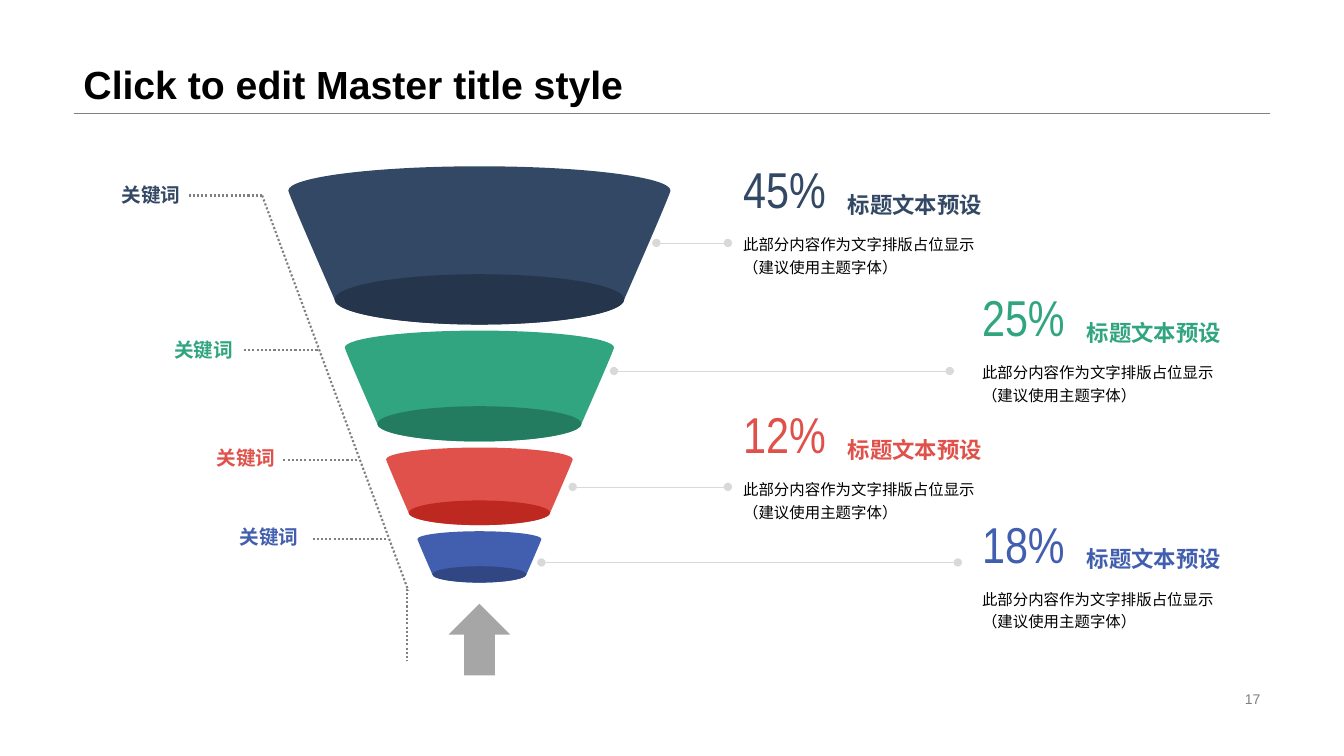
import copy
from collections import namedtuple

from lxml import etree
from pptx import Presentation
from pptx import util as u
from pptx.dml.color import RGBColor
from pptx.enum import dml, shapes, text
from pptx.oxml.ns import qn

COLORS = {
    "black": "000000", "gray": "808080", "arrow": "A6A6A6", "leader": "D9D9D9",
    "navy": "324865", "navy_dark": "25364C",
    "green": "30A580", "green_dark": "247C60",
    "red": "DF514A", "red_dark": "BD2921",
    "blue": "425FAF", "blue_dark": "314783",
}
FUNNEL_CENTER = 4.755
ROUND = 0.55  # handle length of a Bezier quarter ellipse
BODY = "此部分内容作为文字排版占位显示\n（建议使用主题字体）"

# Horizontal place of a description, with widths of its body and heading
Column = namedtuple("Column", "left body_width heading_width")
INNER = Column(7.37, 2.99, 1.87)
OUTER = Column(9.74, 2.67, 1.67)

# keyword: left, top; dots and leader: start x, end x, y
Tier = namedtuple("Tier", "color top width height percent column text_top keyword dots leader")
TIERS = [
    Tier("navy", 1.65, 3.79, 1.57, "45%", INNER, 1.57,
         (0.89, 1.65), (1.87, 2.6, 1.94), (6.51, 7.22, 2.41)),
    Tier("green", 3.28, 2.67, 1.1, "25%", OUTER, 2.84,
         (1.41, 3.18), (2.42, 3.15, 3.47), (6.09, 9.42, 3.68)),
    Tier("red", 4.44, 1.85, 0.77, "12%", INNER, 4,
         (1.83, 4.26), (2.81, 3.55, 4.56), (5.68, 7.22, 4.83)),
    Tier("blue", 5.27, 1.23, 0.51, "18%", OUTER, 5.09,
         (2.06, 5.04), (3.1, 3.84, 5.35), (5.37, 9.5, 5.58)),
]


def rgb(name):
    return RGBColor.from_string(COLORS[name])


def write_text(frame, content, size=11, color="black", font="Arial", bold=False,
               align=text.PP_ALIGN.LEFT, anchor=text.MSO_ANCHOR.TOP,
               spacing=1.0, margins=(0, 0)):
    frame.word_wrap = True
    frame.vertical_anchor = anchor
    frame.margin_left = frame.margin_right = u.Inches(margins[0])
    frame.margin_top = frame.margin_bottom = u.Inches(margins[1])
    paragraph = frame.paragraphs[0]
    paragraph.text = content.replace("\n", "\v")
    paragraph.alignment = align
    paragraph.line_spacing = spacing
    for run in paragraph.runs:
        run.font.name = font
        run.font.size = u.Pt(size)
        run.font.bold = bold
        run.font.color.rgb = rgb(color)
    # A line break carries the same size as the text around it
    for line_break in paragraph._p.findall(qn("a:br")):
        line_break.insert(0, copy.deepcopy(paragraph.runs[0]._r.rPr))


class FunnelSlide:
    """Holds the slide and draws each kind of element in its style."""

    def __init__(self, slide):
        self.slide = slide

    def text(self, left, top, width, height, content, **style):
        box = self.slide.shapes.add_textbox(*map(u.Inches, (left, top, width, height)))
        write_text(box.text_frame, content, **style)

    def paint(self, shape, color):
        shape.shadow.inherit = False
        shape.fill.solid()
        shape.fill.fore_color.rgb = rgb(color)
        shape.line.fill.background()

    def shape(self, kind, left, top, width, height, color):
        shape = self.slide.shapes.add_shape(kind, *map(u.Inches, (left, top, width, height)))
        self.paint(shape, color)

    def line(self, x1, y1, x2, y2, color="gray", width=0.25, dotted=False, dots_at_ends=False):
        line = self.slide.shapes.add_connector(
            shapes.MSO_CONNECTOR.STRAIGHT, *map(u.Inches, (x1, y1, x2, y2)))
        line.line.color.rgb = rgb(color)
        line.line.width = u.Pt(width)
        if dotted:
            line.line.dash_style = dml.MSO_LINE.ROUND_DOT
        if dots_at_ends:
            for end in ("a:headEnd", "a:tailEnd"):
                etree.SubElement(line.line._get_or_add_ln(), qn(end), type="oval")
        etree.SubElement(line._element.spPr, qn("a:effectLst"))

    def curve(self, points, color):
        """Draw a closed outline: a start point, then three points per Bezier curve."""
        points = [(u.Inches(x), u.Inches(y)) for x, y in points]
        builder = self.slide.shapes.build_freeform(*points[0])
        builder.add_line_segments(points[1:], close=True)
        shape = builder.convert_to_shape()
        segments = list(shape._element.iter(qn("a:lnTo")))
        for first, second, third in zip(*[iter(segments)] * 3):
            first.tag = qn("a:cubicBezTo")
            for segment in (second, third):
                first.append(segment[0])
                segment.getparent().remove(segment)
        self.paint(shape, color)

    def tier(self, tier):
        """A cup: arc over the rim, slanted sides, arc under the base."""
        rim_width, rim_height = tier.width / 2, tier.height * 0.153
        base_width, base_height = tier.width * 0.379, tier.height * 0.159
        rim_y = tier.top + rim_height
        base_y = tier.top + tier.height - base_height
        # Offsets from the centre axis, clockwise from the left end of the rim
        outline = [
            (-rim_width, rim_y),
            (-rim_width, rim_y - ROUND * rim_height), (-ROUND * rim_width, tier.top),
            (0, tier.top),
            (ROUND * rim_width, tier.top), (rim_width, rim_y - ROUND * rim_height),
            (rim_width, rim_y),
            (rim_width, rim_y + 0.15 * rim_height), (base_width, base_y),
            (base_width, base_y),
            (base_width, base_y + ROUND * base_height),
            (ROUND * base_width, base_y + base_height),
            (0, base_y + base_height),
            (-ROUND * base_width, base_y + base_height),
            (-base_width, base_y + ROUND * base_height),
            (-base_width, base_y),
            (-base_width, base_y), (-rim_width, rim_y + 0.15 * rim_height),
            (-rim_width, rim_y),
        ]
        self.curve([(FUNNEL_CENTER + x, y) for x, y in outline], tier.color)
        self.shape(shapes.MSO_SHAPE.OVAL, FUNNEL_CENTER - base_width, base_y - base_height,
                   2 * base_width, 2 * base_height, tier.color + "_dark")

    def keyword(self, tier):
        self.text(*tier.keyword, 1, 0.57, "关键词", size=14, color=tier.color, bold=True,
                  align=text.PP_ALIGN.RIGHT, anchor=text.MSO_ANCHOR.MIDDLE,
                  margins=(0.1, 0.05))

    def description(self, tier):
        left, body_width, heading_width = tier.column
        top = tier.text_top
        self.text(left, top + 0.73, body_width, 0.52, BODY, spacing=1.2)
        self.text(left, top, 1.84, 0.74, tier.percent, size=36, color=tier.color,
                  font="Arial Narrow")
        self.text(left + 1.04, top + 0.31, heading_width, 0.29, "标题文本预设", size=16,
                  color=tier.color, bold=True, anchor=text.MSO_ANCHOR.MIDDLE)


def main():
    presentation = Presentation()
    presentation.slide_width = u.Inches(13.33)
    presentation.slide_height = u.Inches(7.5)
    page = FunnelSlide(presentation.slides.add_slide(presentation.slide_layouts[6]))

    # Title and page number
    page.line(0.73, 1.12, 12.6, 1.12)
    page.text(0.73, 0, 11.87, 1.12, "Click to edit Master title style", size=28, bold=True,
              anchor=text.MSO_ANCHOR.BOTTOM, spacing=0.9, margins=(0.1, 0.05))
    page.text(9.42, 6.82, 3.18, 0.23, "17", size=10, color="gray",
              align=text.PP_ALIGN.RIGHT, anchor=text.MSO_ANCHOR.MIDDLE, margins=(0.1, 0))

    # Funnel and the arrow below it
    for tier in TIERS:
        page.tier(tier)
    page.shape(shapes.MSO_SHAPE.UP_ARROW, 4.45, 5.99, 0.61, 0.71, "arrow")

    # Dotted outline on the left
    page.line(4.04, 5.84, 4.04, 6.56, width=1.5, dotted=True)
    page.line(2.6, 1.94, 4.05, 5.86, width=1.5, dotted=True)

    # Keywords, descriptions and their leaders
    for tier in TIERS:
        start, end, y = tier.dots
        page.line(start, y, end, y, width=1.5, dotted=True)
        page.keyword(tier)
        page.description(tier)
        start, end, y = tier.leader
        page.line(start, y, end, y, color="leader", dots_at_ends=True)

    presentation.save("out.pptx")


if __name__ == "__main__":
    main()
